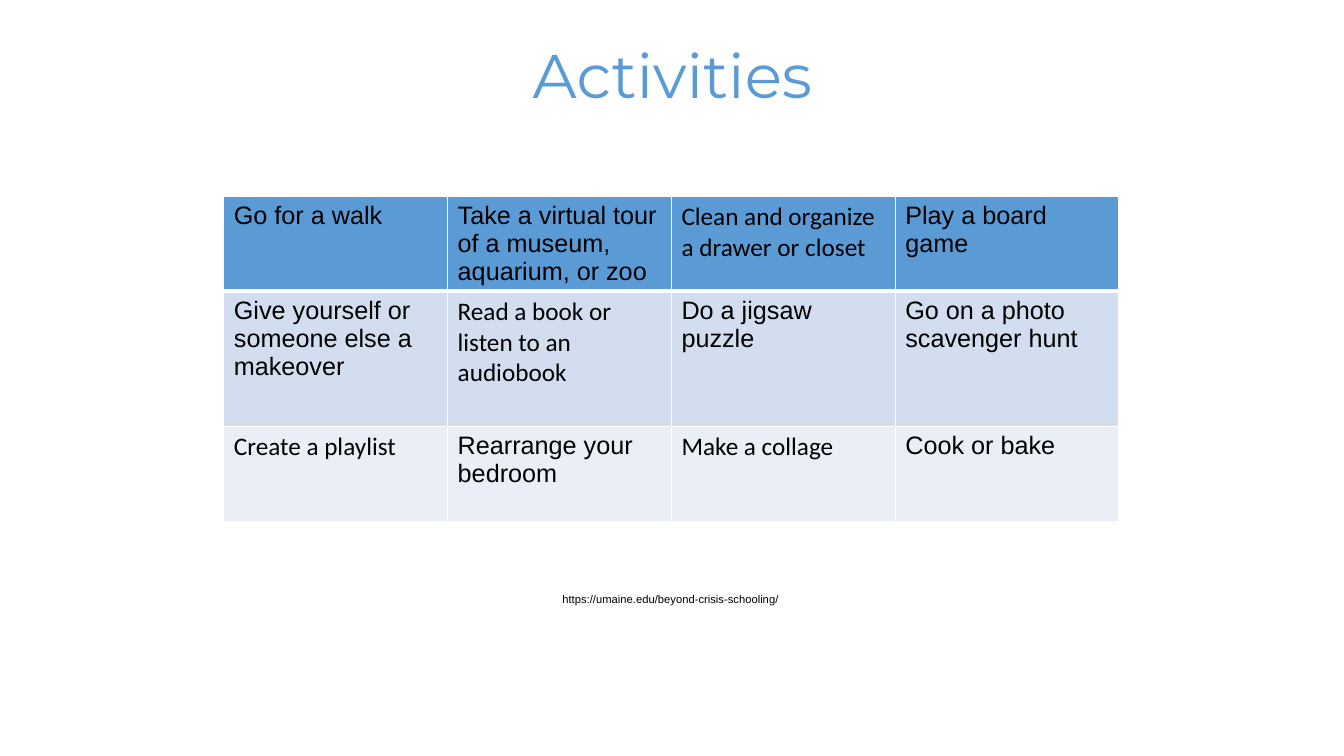
from lxml.etree import SubElement
from pptx import Presentation
from pptx.dml.color import RGBColor
from pptx.enum.text import MSO_ANCHOR, PP_ALIGN
from pptx.oxml.ns import qn
from pptx.util import Inches, Pt

COL_W = 2.22
ROW_HEIGHTS = [0.94, 1.34, 0.94]
ROW_FILLS = ["5B9BD5", "D2DEEF", "EAEFF7"]
ACTIVITIES = [
    ["Go for a walk", "Take a virtual tour of a museum, aquarium, or zoo",
     "Clean and organize a drawer or closet", "Play a board game"],
    ["Give yourself or someone else a makeover",
     "Read a book or listen to an audiobook",
     "Do a jigsaw puzzle", "Go on a photo scavenger hunt"],
    ["Create a playlist", "Rearrange your bedroom",
     "Make a collage", "Cook or bake"],
]
CALIBRI_CELLS = {(0, 2), (1, 1), (2, 0), (2, 2)}


def rgb(color):
    return RGBColor.from_string(color)


def set_text(tf, text, font, size, color="000000"):
    tf.text = text
    p = tf.paragraphs[0]
    f = p.runs[0].font
    f.name, f.size, f.bold = font, Pt(size), False
    f.color.rgb = rgb(color)
    return p


def set_border(cell, side, width, color="FFFFFF"):
    """Draw one edge of a cell; call it before the cell gets its fill."""
    ln = SubElement(cell._tc.get_or_add_tcPr(), qn(f"a:ln{side}"), w=str(Pt(width)))
    fill = SubElement(ln, qn("a:solidFill"))
    SubElement(fill, qn("a:srgbClr"), val=color)


def add_title(s, text):
    sp = s.shapes.title
    sp.left, sp.top, sp.width, sp.height = map(Inches, (0.92, 0.4, 11.5, 1.45))
    tf = sp.text_frame
    tf.vertical_anchor = MSO_ANCHOR.TOP
    p = set_text(tf, text, "Montserrat", 44, "5B9BD5")
    p.alignment = PP_ALIGN.CENTER
    p.line_spacing = 0.9


def add_activity_table(s, left, top):
    n_rows, n_cols = len(ACTIVITIES), len(ACTIVITIES[0])
    table = s.shapes.add_table(n_rows, n_cols, Inches(left), Inches(top),
                               Inches(COL_W * n_cols),
                               Inches(sum(ROW_HEIGHTS))).table
    for col in table.columns:
        col.width = Inches(COL_W)
    for i, texts in enumerate(ACTIVITIES):
        table.rows[i].height = Inches(ROW_HEIGHTS[i])
        for j, text in enumerate(texts):
            cell = table.cell(i, j)
            font = "Calibri" if (i, j) in CALIBRI_CELLS else "Arial"
            set_text(cell.text_frame, text, font, 18)
            for side in "LRTB":
                below_header = (i, side) in {(0, "B"), (1, "T")}
                set_border(cell, side, 3 if below_header else 1)
            cell.fill.solid()
            cell.fill.fore_color.rgb = rgb(ROW_FILLS[i])


def add_source(s, text):
    sp = s.shapes.add_textbox(*map(Inches, (5.48, 5.83, 2.37, 0.24)))
    sp.text_frame.word_wrap = False
    set_text(sp.text_frame, text, "Arial", 8)


def main():
    prs = Presentation()
    prs.slide_width, prs.slide_height = Inches(13.33), Inches(7.5)
    s = prs.slides.add_slide(prs.slide_layouts[5])
    add_title(s, "Activities")
    add_activity_table(s, 2.22, 1.95)
    add_source(s, "https://umaine.edu/beyond-crisis-schooling/")
    prs.save("out.pptx")


if __name__ == "__main__":
    main()
